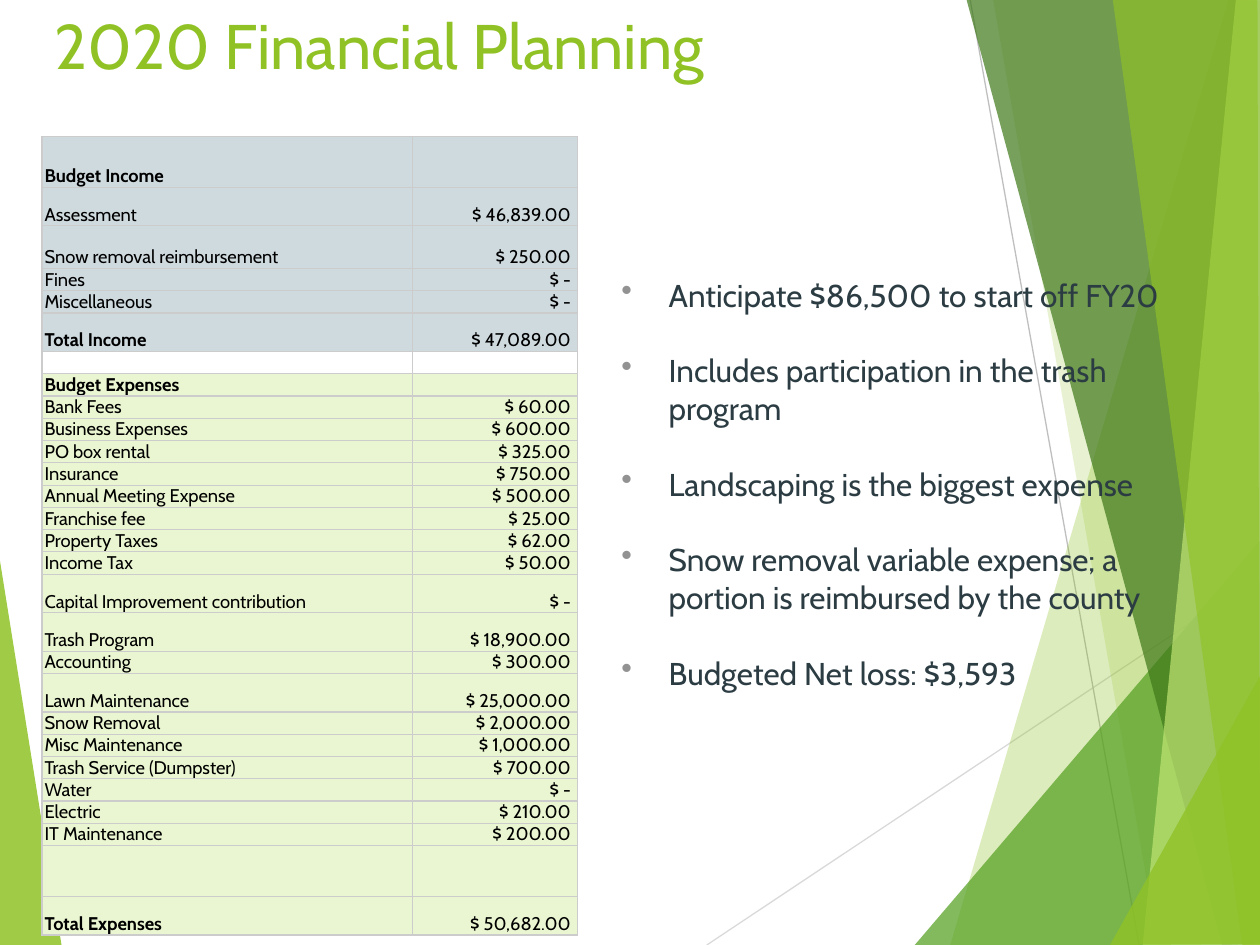
from dataclasses import dataclass

from lxml import etree
from pptx import Presentation
from pptx.dml.color import RGBColor
from pptx.enum.shapes import MSO_CONNECTOR
from pptx.enum.text import MSO_ANCHOR, PP_ALIGN
from pptx.oxml.ns import qn
from pptx.util import Pt

STRAIGHT = MSO_CONNECTOR.STRAIGHT
TOP, BOTTOM = MSO_ANCHOR.TOP, MSO_ANCHOR.BOTTOM
LEFT, RIGHT = PP_ALIGN.LEFT, PP_ALIGN.RIGHT


@dataclass(frozen=True)
class Theme:
    font: str = "Cabin"
    title_size: float = 36
    body_size: float = 18
    table_size: float = 10.5
    lime: str = "90C226"
    green: str = "54A021"
    forest: str = "3F7819"
    pale: str = "C0E474"
    body: str = "2C3C43"
    bullet: str = "929292"
    cell_text: str = "000000"
    income: str = "CFDADF"
    expenses: str = "EAF6D1"
    border: str = "CCCCCC"
    light_line: str = "D9D9D9"
    dark_line: str = "BFBFBF"


theme = Theme()


def add_element(parent, tag, **attributes):
    element = etree.SubElement(parent, qn(tag))
    for name, value in attributes.items():
        element.set(name, str(value))
    return element


def style(paragraph, size, color, bold=False):
    paragraph.font.name = theme.font
    paragraph.font.size = Pt(size)
    paragraph.font.bold = bold
    paragraph.font.color.rgb = RGBColor.from_string(color)


presentation = Presentation()
presentation.slide_width, presentation.slide_height = Pt(720), Pt(540)
slide = presentation.slides.add_slide(presentation.slide_layouts[5])
shapes = slide.shapes

# Thin background lines
for start, end, color in [
    ((403.9, 540), (720.7, 329), theme.light_line),
    ((554.4, 0), (650.9, 540), theme.dark_line),
]:
    line = shapes.add_connector(STRAIGHT, *map(Pt, start + end))
    line.line.color.rgb = RGBColor.from_string(color)
    line.line.width = Pt(0.75)
    add_element(line._element.spPr, "a:effectLst")

# Translucent facets: colour, opacity in percent, corners
facets = [
    (theme.lime, 85, [(-0.7, 316), (35.3, 540.7), (-0.7, 540)]),
    (theme.lime, 30, [(702, 0), (543, 540), (721, 540.7), (720.7, 0.7)]),
    (theme.lime, 20, [(567.4, -0.7), (661.7, 540), (720.7, 540), (720.7, -0.7)]),
    (theme.green, 72, [(522.7, 540), (720, 309), (720.7, 540)]),
    (theme.forest, 70, [(552.2, -0.7), (698.4, 540), (720.7, 539.3), (720.7, -0.7)]),
    (theme.pale, 70, [(706.3, -0.7), (653, 540), (720.7, 540), (720, -0.7)]),
    (theme.lime, 65, [(635.8, -0.7), (710, 540), (720, 540), (718.6, -0.7)]),
    (theme.lime, 80, [(634.3, 540), (720.7, 385.2), (720.7, 539.3)]),
]
for color, opacity, corners in facets:
    points = [(Pt(x), Pt(y)) for x, y in corners]
    builder = shapes.build_freeform(*points[0])
    builder.add_line_segments(points[1:], close=True)
    facet = builder.convert_to_shape()
    facet.shadow.inherit = False
    facet.line.fill.background()
    facet.fill.solid()
    facet.fill.fore_color.rgb = RGBColor.from_string(color)
    fill_color = facet._element.spPr.find(".//" + qn("a:srgbClr"))
    add_element(fill_color, "a:alpha", val=opacity * 1000)

# Title, in front of the facets
title = shapes.title
shapes._spTree.append(title._element)
title.left, title.top, title.width, title.height = Pt(24), Pt(0), Pt(648), Pt(98.5)
title.text_frame.text = "2020 Financial Planning"
title.text_frame.vertical_anchor = TOP
title.text_frame.paragraphs[0].alignment = LEFT
style(title.text_frame.paragraphs[0], theme.title_size, theme.lime)

# Bullet list
bullets = [
    "Anticipate $86,500 to start off FY20",
    "Includes participation in the trash program",
    "Landscaping is the biggest expense",
    "Snow removal variable expense; a portion is reimbursed by the county",
    "Budgeted Net loss: $3,593",
]
frame = shapes.add_textbox(Pt(348), Pt(132), Pt(337.5), Pt(369)).text_frame
frame.word_wrap = True
frame.margin_top = Pt(25.5)
for index, text in enumerate(bullets):
    paragraph = frame.paragraphs[0] if index == 0 else frame.add_paragraph()
    paragraph.text = text
    paragraph.space_after = Pt(21.6)
    properties = paragraph._p.get_or_add_pPr()
    properties.set("marL", str(Pt(27)))
    properties.set("indent", str(-Pt(27)))
    bullet_color = add_element(properties, "a:buClr")
    add_element(bullet_color, "a:srgbClr", val=theme.bullet)
    add_element(properties, "a:buChar", char="•")
    style(paragraph, theme.body_size, theme.body)

# Budget table: label, amount, row height
SHORT, MEDIUM, HIGH, TALL = 12.75, 22, 24.3, 29.1
income_rows = [
    ("Budget Income", "", TALL),
    ("Assessment", "46,839.00", MEDIUM),
    ("Snow removal reimbursement", "250.00", HIGH),
    ("Fines", "-", SHORT),
    ("Miscellaneous", "-", SHORT),
    ("Total Income", "47,089.00", MEDIUM),
]
expense_rows = [
    ("Budget Expenses", "", SHORT),
    ("Bank Fees", "60.00", SHORT),
    ("Business Expenses", "600.00", SHORT),
    ("PO box rental", "325.00", SHORT),
    ("Insurance", "750.00", SHORT),
    ("Annual Meeting Expense", "500.00", SHORT),
    ("Franchise fee", "25.00", SHORT),
    ("Property Taxes", "62.00", SHORT),
    ("Income Tax", "50.00", SHORT),
    ("Capital Improvement contribution", "-", MEDIUM),
    ("Trash Program", "18,900.00", MEDIUM),
    ("Accounting", "300.00", SHORT),
    ("Lawn Maintenance", "25,000.00", MEDIUM),
    ("Snow Removal", "2,000.00", SHORT),
    ("Misc Maintenance", "1,000.00", SHORT),
    ("Trash Service (Dumpster)", "700.00", SHORT),
    ("Water", "-", SHORT),
    ("Electric", "210.00", SHORT),
    ("IT Maintenance", "200.00", SHORT),
    ("", "", TALL),
    ("Total Expenses", "50,682.00", MEDIUM),
]
rows = [(*row, theme.income) for row in income_rows]
rows.append(("", "", SHORT, None))
rows += [(*row, theme.expenses) for row in expense_rows]

total_height = sum(row[2] for row in rows)
table = shapes.add_table(len(rows), 2, Pt(24), Pt(78), Pt(306), Pt(total_height)).table
table.first_row = table.horz_banding = False
table.columns[0].width, table.columns[1].width = Pt(211.7), Pt(94.3)
for row_index, (label, amount, height, fill) in enumerate(rows):
    table.rows[row_index].height = Pt(height)
    texts = (label, f"$ {amount} " if amount else "")
    for column, (text, alignment) in enumerate(zip(texts, (LEFT, RIGHT))):
        cell = table.cell(row_index, column)
        cell.margin_left = cell.margin_right = Pt(1.5)
        cell.margin_top = cell.margin_bottom = 0
        cell.vertical_anchor = BOTTOM
        paragraph = cell.text_frame.paragraphs[0]
        paragraph.alignment = alignment
        bold = column == 0 and label.startswith(("Budget", "Total"))
        style(paragraph, theme.table_size, theme.cell_text, bold)
        if text:
            paragraph.text = text
        else:
            add_element(paragraph._p, "a:endParaRPr", sz=int(theme.table_size * 100))
        for side in ("a:lnL", "a:lnR", "a:lnT", "a:lnB"):
            border = add_element(cell._tc.get_or_add_tcPr(), side, w=Pt(0.75))
            border_fill = add_element(border, "a:solidFill")
            add_element(border_fill, "a:srgbClr", val=theme.border)
        if fill:
            cell.fill.solid()
            cell.fill.fore_color.rgb = RGBColor.from_string(fill)
        else:
            cell.fill.background()

presentation.save("out.pptx")
